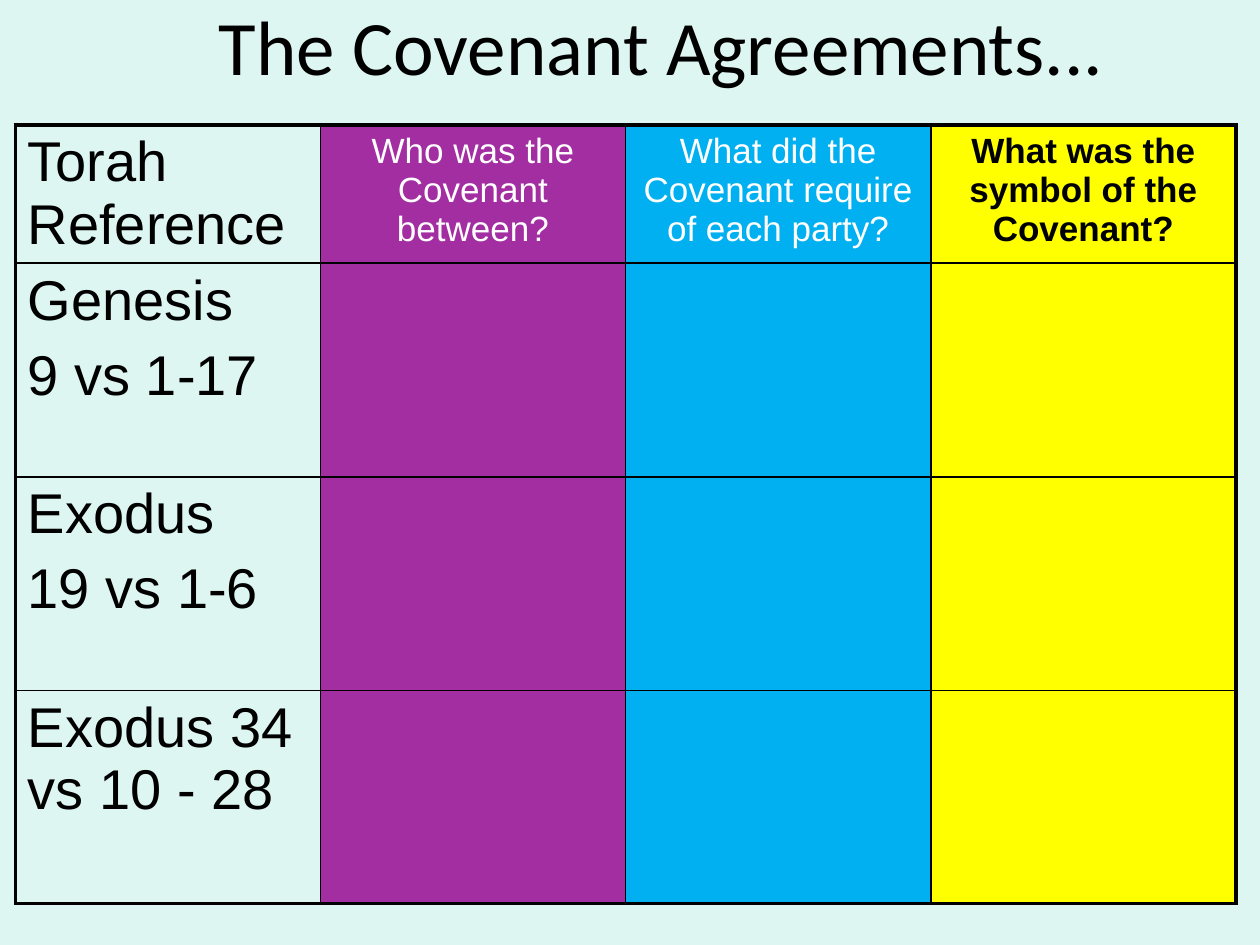
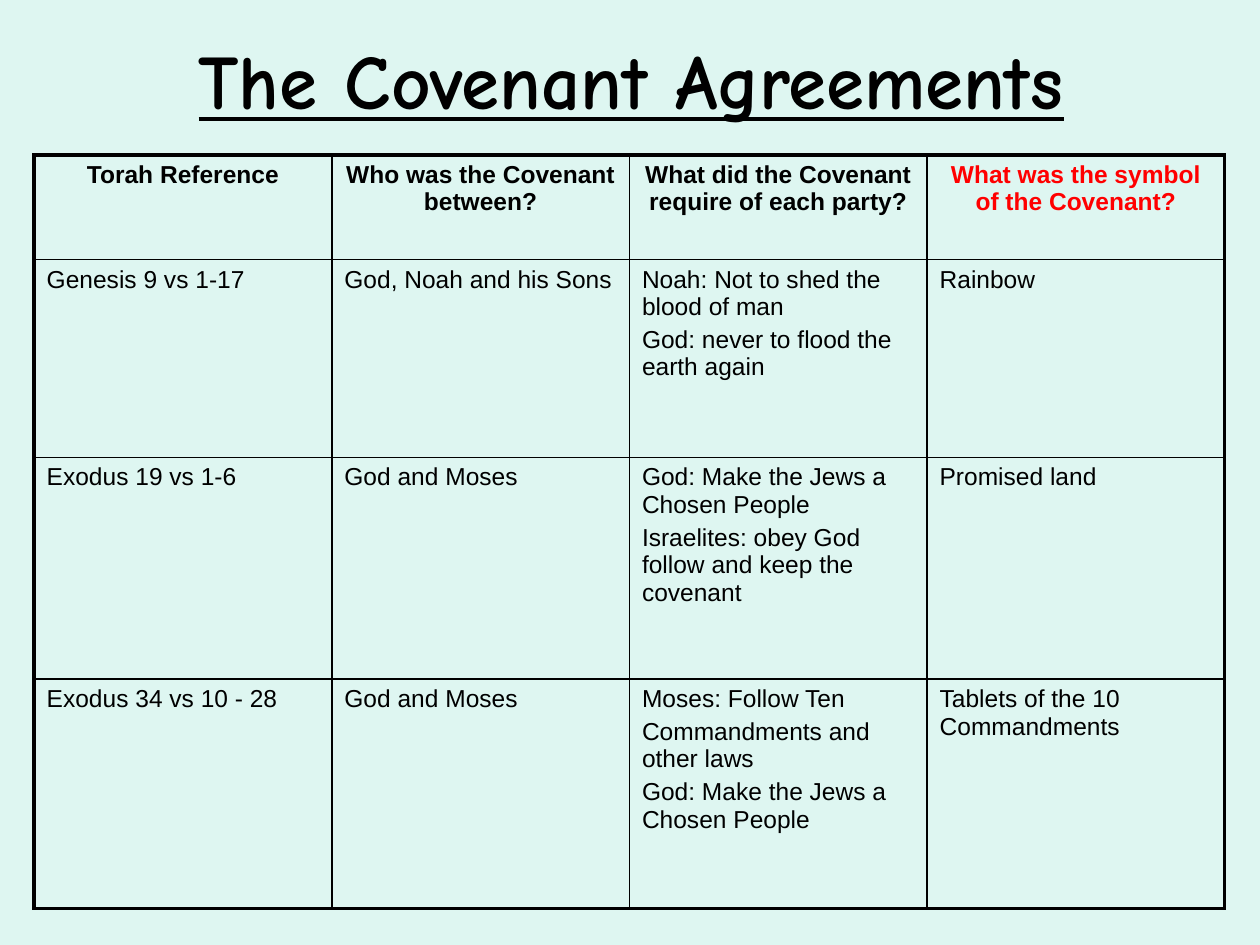
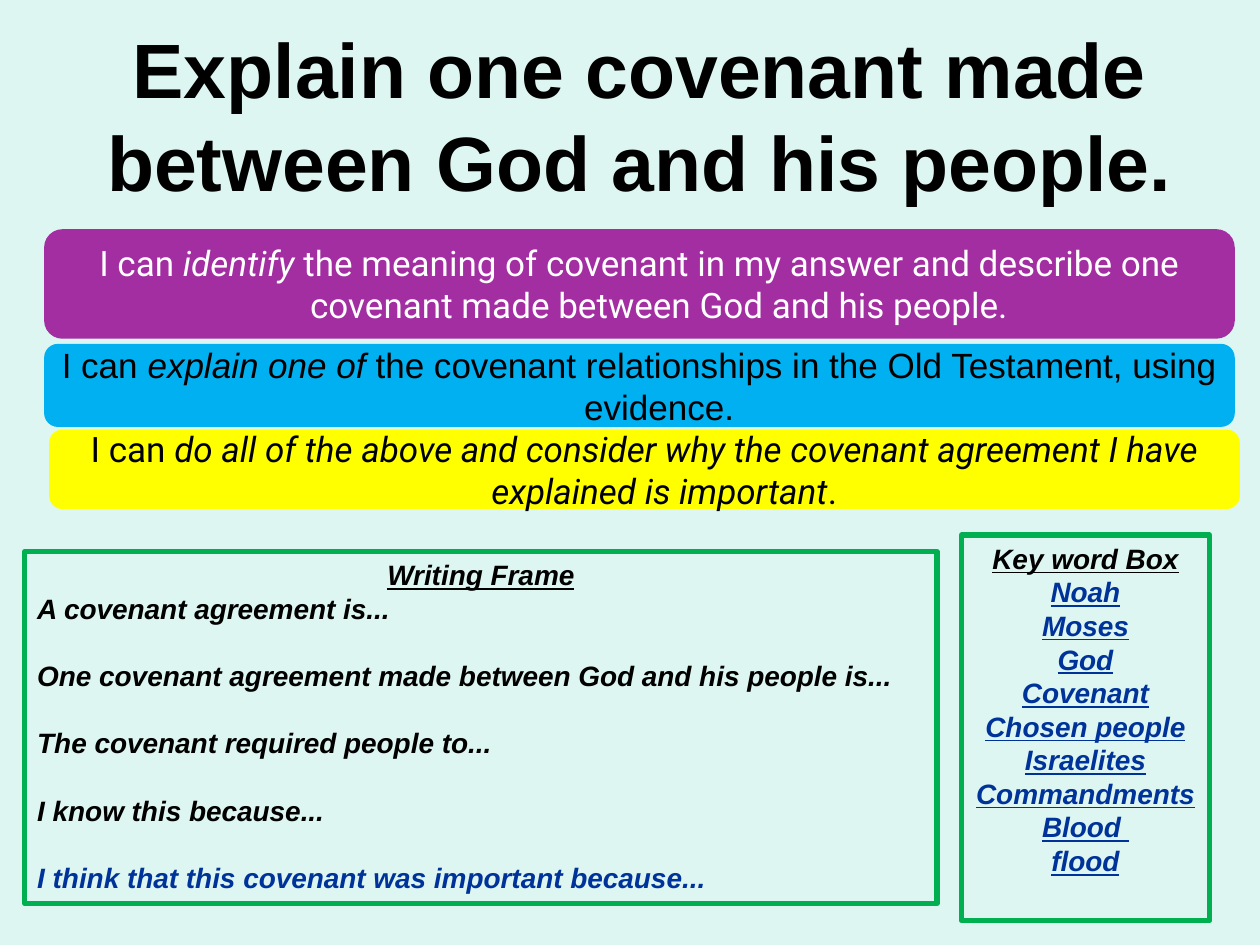
from lxml.etree import SubElement as Sub
from pptx import Presentation
from pptx.dml.color import RGBColor as RGB
from pptx.enum.shapes import MSO_SHAPE as Form
from pptx.enum.text import MSO_ANCHOR as Anchor, MSO_AUTO_SIZE as Auto, PP_ALIGN as Align
from pptx.oxml.ns import qn
from pptx.util import Pt

MINT = RGB(0xDE, 0xF6, 0xF1)
BLACK = RGB(0, 0, 0)
WHITE = RGB(255, 255, 255)
PURPLE = RGB(0xA2, 0x2E, 0xA2)
BLUE = RGB(0, 0xB0, 0xF0)
YELLOW = RGB(255, 255, 0)
RED = RGB(255, 0, 0)
GREEN = RGB(0, 0xB0, 0x50)
NAVY = RGB(0, 0x33, 0x99)

# Line height and paragraph gap, as parts of the text size
CELL_LINE, CELL_GAP, PAGE_LINE = 1.12, 0.22, 1.2
THICK, THIN = 2.25, 1

# Content: questions and answers on the covenants
ASK = [
    "Torah Reference",
    "Who was the Covenant between?",
    "What did the Covenant require of each party?",
    "What was the symbol of the Covenant?",
]
TASK_ROWS = [
    [["Genesis", "9 vs 1-17"], [], [], []],
    [["Exodus", "19 vs 1-6"], [], [], []],
    [["Exodus 34 vs 10 - 28"], [], [], []],
]
KEY_ROWS = [
    [["Genesis 9 vs 1-17"], ["God, Noah and his Sons"],
     ["Noah: Not to shed the blood of man", "God: never to flood the earth again"],
     ["Rainbow"]],
    [["Exodus 19 vs 1-6"], ["God and Moses"],
     ["God: Make the Jews a Chosen People",
      "Israelites: obey God follow and keep the covenant"],
     ["Promised land"]],
    [["Exodus 34 vs 10 - 28"], ["God and Moses"],
     ["Moses: Follow Ten", "Commandments and other laws",
      "God: Make the Jews a Chosen People"],
     ["Tablets of the 10 Commandments"]],
]

# Header style per column: size, colour, bold, alignment
TASK_HEAD = [
    (32, BLACK, False, Align.LEFT),
    (20, WHITE, False, Align.CENTER),
    (20, WHITE, False, Align.CENTER),
    (20, BLACK, True, Align.CENTER),
]
KEY_HEAD = [(14, ink, True, Align.CENTER) for ink in (BLACK, BLACK, BLACK, RED)]

# Goals: box, fill, ink, font, then plain / italic / plain text
GOALS = [
    ((25.2, 131, 680.4, 62.6), PURPLE, WHITE, "Roboto",
     ("I can ", "identify", " the meaning of covenant in my answer and describe "
      "one covenant made between God and his people.")),
    ((25.2, 196.5, 680.4, 47.5), BLUE, BLACK, "Arial",
     ("I can ", "explain one of",
      " the covenant relationships in the Old Testament, using evidence.")),
    ((28.1, 245.5, 680.4, 45.4), YELLOW, BLACK, "Roboto",
     ("I can ", "do all of the above and consider why the covenant agreement "
      "I have explained is important", ".")),
]
PROMPTS = [
    "A covenant agreement is...",
    "One covenant agreement made between God and his people is...",
    "The covenant required people to...",
    "I know this because...",
    "I think that this covenant was important because...",
]
WORDS = ["Noah", "Moses", "God", "Covenant", "Chosen people", "Israelites",
         "Commandments", "Blood ", "flood"]


def add_run(par, text, size, ink=BLACK, face="Arial", bold=False, slant=False, under=False):
    run = par.add_run()
    run.text = text
    font = run.font
    font.size, font.name, font.color.rgb = Pt(size), face, ink
    font.bold, font.italic, font.underline = bold, slant, under


def add_pars(frame, count):
    """Give the first paragraph and as many new ones as are needed."""
    return [frame.paragraphs[0]] + [frame.add_paragraph() for _ in range(count - 1)]


def set_box(shape, box):
    shape.left, shape.top, shape.width, shape.height = map(Pt, box)


def add_slide(deck, title, box, face, line=None, **style):
    slide = deck.slides.add_slide(deck.slide_layouts[5])
    head = slide.shapes.title
    set_box(head, box)
    frame = head.text_frame
    frame.auto_size, frame.vertical_anchor = Auto.NONE, Anchor.MIDDLE
    par = frame.paragraphs[0]
    par.alignment = Align.CENTER
    if line:
        par.line_spacing = Pt(44 * line)
    add_run(par, title, 44, face=face, **style)
    return slide


def set_edges(cell, widths):
    props = cell._tc.get_or_add_tcPr()
    for side, width in zip("LRTB", widths):
        edge = Sub(props, qn(f"a:ln{side}"), w=str(Pt(width)))
        Sub(Sub(edge, qn("a:solidFill")), qn("a:srgbClr"), val=str(BLACK))


def add_grid(slide, box, highs, heads, rows, size, fills):
    cells = [[[ask] for ask in ASK]] + rows
    tall, wide = len(cells), len(ASK)
    grid = slide.shapes.add_table(tall, wide, *map(Pt, box)).table
    grid.first_row = grid.horz_banding = False
    for col in grid.columns:
        col.width = Pt(box[2] / wide)
    for r, high in enumerate(highs):
        grid.rows[r].height = Pt(high)
        for c, lines in enumerate(cells[r]):
            cell = grid.cell(r, c)
            rims = (c == 0, c == wide - 1, r == 0, r == tall - 1)
            set_edges(cell, [THICK if rim else THIN for rim in rims])
            if fills[c]:
                cell.fill.solid()
                cell.fill.fore_color.rgb = fills[c]
            else:
                cell.fill.background()
            look = heads[c] if r == 0 else (size, BLACK, False, Align.LEFT)
            pt, ink, bold, align = look
            for par, text in zip(add_pars(cell.text_frame, len(lines)), lines):
                par.alignment = align
                par.line_spacing, par.space_before = Pt(pt * CELL_LINE), Pt(pt * CELL_GAP)
                add_run(par, text, pt, ink, bold=bold)


def add_box(slide, form, box, fill=None, edge=None, anchor=Anchor.TOP):
    shape = slide.shapes.add_shape(form, *map(Pt, box))
    shape.shadow.inherit = False
    if fill:
        shape.fill.solid()
        shape.fill.fore_color.rgb = fill
    else:
        shape.fill.background()
    if edge:
        shape.line.color.rgb, shape.line.width = edge, Pt(3)
    else:
        shape.line.fill.background()
    frame = shape.text_frame
    frame.word_wrap, frame.vertical_anchor = True, anchor
    return frame


def add_goal(slide, box, fill, ink, face, parts):
    frame = add_box(slide, Form.ROUNDED_RECTANGLE, box, fill, anchor=Anchor.MIDDLE)
    par = frame.paragraphs[0]
    par.alignment, par.line_spacing = Align.CENTER, Pt(20 * PAGE_LINE)
    props = par._p.get_or_add_pPr()
    props.set("marL", str(Pt(22.5)))
    props.set("indent", str(-Pt(22.5)))
    for part, slant in zip(parts, (False, True, False)):
        add_run(par, part, 20, ink, face, slant=slant)


def add_list(slide, box, head, items, inks, align, under, gap):
    """Green frame with an underlined heading and a list below it."""
    frame = add_box(slide, Form.RECTANGLE, box, edge=GREEN)
    pars = add_pars(frame, len(items) + 1)
    for i, (par, text) in enumerate(zip(pars, [head] + items)):
        par.alignment = Align.CENTER if i == 0 else align
        par.line_spacing = Pt(16 * PAGE_LINE)
        par.space_before = Pt(gap if i > 1 else 0)
        ink = BLACK if i == 0 else inks[i - 1]
        add_run(par, text, 16, ink, bold=True, slant=True, under=under or i == 0)


def main():
    deck = Presentation()
    deck.slide_width, deck.slide_height = Pt(720), Pt(540)
    back = deck.slide_master.background.fill
    back.solid()
    back.fore_color.rgb = MINT

    # Slide 1: blank grid to fill in
    slide = add_slide(deck, "The Covenant Agreements...", (54, -19.4, 648, 90), "Calibri")
    add_grid(slide, (8.7, 71.4, 697.6, 445), (64.8, 122.2, 122, 122),
             TASK_HEAD, TASK_ROWS, 32, (None, PURPLE, BLUE, YELLOW))

    # Slide 2: grid with answers
    slide = add_slide(deck, "The Covenant Agreements", (36.7, 0, 648, 90),
                      "Comic Neue", bold=True, under=True)
    add_grid(slide, (19.5, 88.6, 680.4, 430.6), (59.8, 113, 126.7, 131),
             KEY_HEAD, KEY_ROWS, 14, [None] * 4)

    # Slide 3: writing task
    slide = add_slide(deck, "Explain one covenant made between God and his people.",
                      (41.8, 20.2, 648, 90), "Arial", PAGE_LINE, bold=True)
    for goal in GOALS:
        add_goal(slide, *goal)
    add_list(slide, (14.2, 315.3, 521.3, 200.9), "Writing Frame", PROMPTS,
             [BLACK] * 4 + [NAVY], Align.LEFT, False, 16 * PAGE_LINE)
    add_list(slide, (549.4, 305.8, 141.8, 220.3), "Key word Box", WORDS,
             [NAVY] * len(WORDS), Align.CENTER, True, 0)

    deck.save("out.pptx")


if __name__ == "__main__":
    main()
